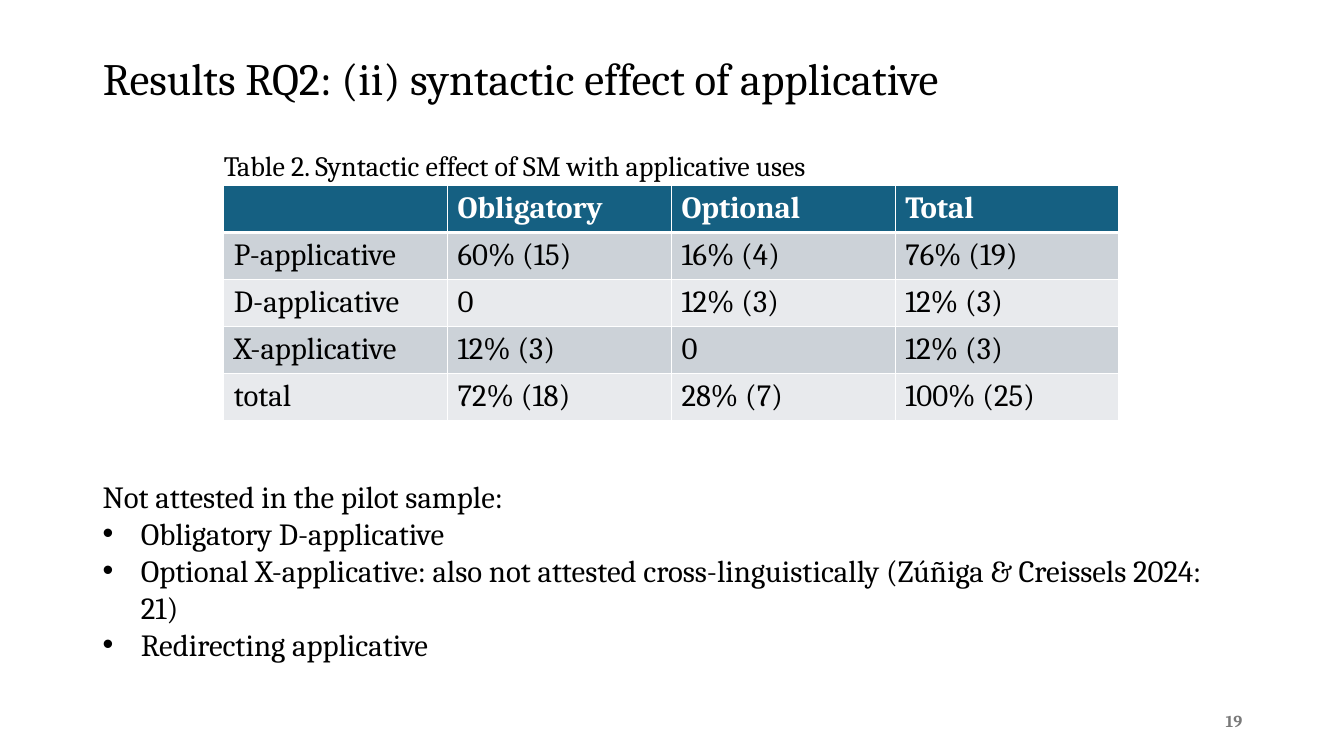
"""Build the slide on the syntactic effect of the applicative."""
from dataclasses import dataclass

from lxml import etree
from pptx import Presentation
from pptx import util as u
from pptx.dml.color import RGBColor
from pptx.enum import text
from pptx.oxml import ns


@dataclass(frozen=True)
class Theme:
    font: str = "Cambria"
    ink: str = "000000"
    white: str = "FFFFFF"
    muted: str = "797979"
    header: str = "156082"
    bands: tuple[str, str] = ("CCD2D8", "E8EAED")
    title_size: int = 32
    text_size: int = 22
    caption_size: int = 20
    number_size: int = 12


@dataclass(frozen=True)
class Box:
    left: float
    top: float
    width: float
    height: float

    def lengths(self) -> list[u.Length]:
        return [u.Inches(v) for v in (self.left, self.top, self.width, self.height)]


@dataclass(frozen=True)
class Line:
    words: str
    size: int
    color: str = "000000"
    bold: bool = False
    align: text.PP_ALIGN = text.PP_ALIGN.LEFT
    bullet: bool = False


T = Theme()
MARGIN, CONTENT_WIDTH = 0.92, 11.5
HANGING = 0.38
TABLE_LEFT, TABLE_TOP = 2.22, 1.84
COLUMN_WIDTH, ROW_HEIGHT = 2.22, 0.45
RULE, HEADER_RULE = 1, 3

ROWS = [
    ("", "Obligatory", "Optional", "Total"),
    ("P-applicative", "60% (15)", "16% (4)", "76% (19)"),
    ("D-applicative", "0", "12% (3)", "12% (3)"),
    ("X-applicative", "12% (3)", "0", "12% (3)"),
    ("total", "72% (18)", "28% (7)", "100% (25)"),
]
FINDINGS = [
    "Obligatory D-applicative",
    "Optional X-applicative: also not attested cross-linguistically (Zúñiga & Creissels 2024: 21)",
    "Redirecting applicative",
]


def apply(target, values: dict) -> None:
    for name, value in values.items():
        setattr(target, name, value)


def add_bullet(p) -> None:
    pPr = p._p.get_or_add_pPr()
    pPr.set("marL", str(u.Inches(HANGING)))
    pPr.set("indent", str(-u.Inches(HANGING)))
    etree.SubElement(pPr, ns.qn("a:buFont")).set("typeface", "Arial")
    etree.SubElement(pPr, ns.qn("a:buChar")).set("char", "•")


def write(tf, lines: list[Line]) -> None:
    for i, line in enumerate(lines):
        p = tf.add_paragraph() if i else tf.paragraphs[0]
        p.alignment = line.align
        if line.bullet:
            add_bullet(p)
        r = p.add_run()
        r.text = line.words
        apply(r.font, {"name": T.font, "size": u.Pt(line.size), "bold": line.bold})
        r.font.color.rgb = RGBColor.from_string(line.color)


def add_text(s, box: Box, lines: list[Line], **frame) -> None:
    tf = s.shapes.add_textbox(*box.lengths()).text_frame
    apply(tf, {"word_wrap": True, **frame})
    write(tf, lines)


def add_title(s, box: Box, line: Line) -> None:
    sp = s.shapes.title
    apply(sp, dict(zip(("left", "top", "width", "height"), box.lengths())))
    tf = sp.text_frame
    apply(tf, {"word_wrap": True, "auto_size": text.MSO_AUTO_SIZE.NONE,
               "vertical_anchor": text.MSO_ANCHOR.MIDDLE})
    write(tf, [line])
    tf.paragraphs[0].line_spacing = 0.9


def set_borders(cell, widths: dict[str, int]) -> None:
    tcPr = cell._tc.get_or_add_tcPr()
    for i, (side, width) in enumerate(widths.items()):
        ln = etree.Element(ns.qn(f"a:ln{side}"), w=str(u.Pt(width)))
        fill = etree.SubElement(ln, ns.qn("a:solidFill"))
        etree.SubElement(fill, ns.qn("a:srgbClr")).set("val", T.white)
        tcPr.insert(i, ln)


def add_results(s, rows: list[tuple[str, ...]]) -> None:
    count, columns = len(rows), len(rows[0])
    box = Box(TABLE_LEFT, TABLE_TOP, COLUMN_WIDTH * columns, ROW_HEIGHT * count)
    table = s.shapes.add_table(count, columns, *box.lengths()).table
    for i, row in enumerate(rows):
        head = i == 0
        fill = T.header if head else T.bands[(i - 1) % 2]
        top = HEADER_RULE if i == 1 else RULE
        bottom = HEADER_RULE if head else RULE
        for j, words in enumerate(row):
            cell = table.cell(i, j)
            cell.fill.solid()
            cell.fill.fore_color.rgb = RGBColor.from_string(fill)
            set_borders(cell, {"L": RULE, "R": RULE, "T": top, "B": bottom})
            if words:
                color = T.white if head else T.ink
                write(cell.text_frame, [Line(words, T.text_size, color, head)])


def main() -> None:
    prs = Presentation()
    apply(prs, {"slide_width": u.Inches(13.33), "slide_height": u.Inches(7.5)})
    s = prs.slides.add_slide(prs.slide_layouts.get_by_name("Title Only"))
    add_title(s, Box(MARGIN, 0.4, CONTENT_WIDTH, 0.8),
              Line("Results RQ2: (ii) syntactic effect of applicative", T.title_size))
    add_text(s, Box(MARGIN, 1.42, CONTENT_WIDTH, 0.42),
             [Line("Table 2. Syntactic effect of SM with applicative uses", T.caption_size)],
             margin_left=u.Inches(TABLE_LEFT - MARGIN))
    add_results(s, ROWS)
    add_text(s, Box(MARGIN, 4.69, CONTENT_WIDTH, 1.95),
             [Line("Not attested in the pilot sample:", T.text_size)]
             + [Line(words, T.text_size, bullet=True) for words in FINDINGS],
             auto_size=text.MSO_AUTO_SIZE.SHAPE_TO_FIT_TEXT)
    add_text(s, Box(9.42, 6.95, 3, 0.4),
             [Line("19", T.number_size, T.muted, True, text.PP_ALIGN.RIGHT)],
             vertical_anchor=text.MSO_ANCHOR.MIDDLE)
    prs.save("out.pptx")


if __name__ == "__main__":
    main()
